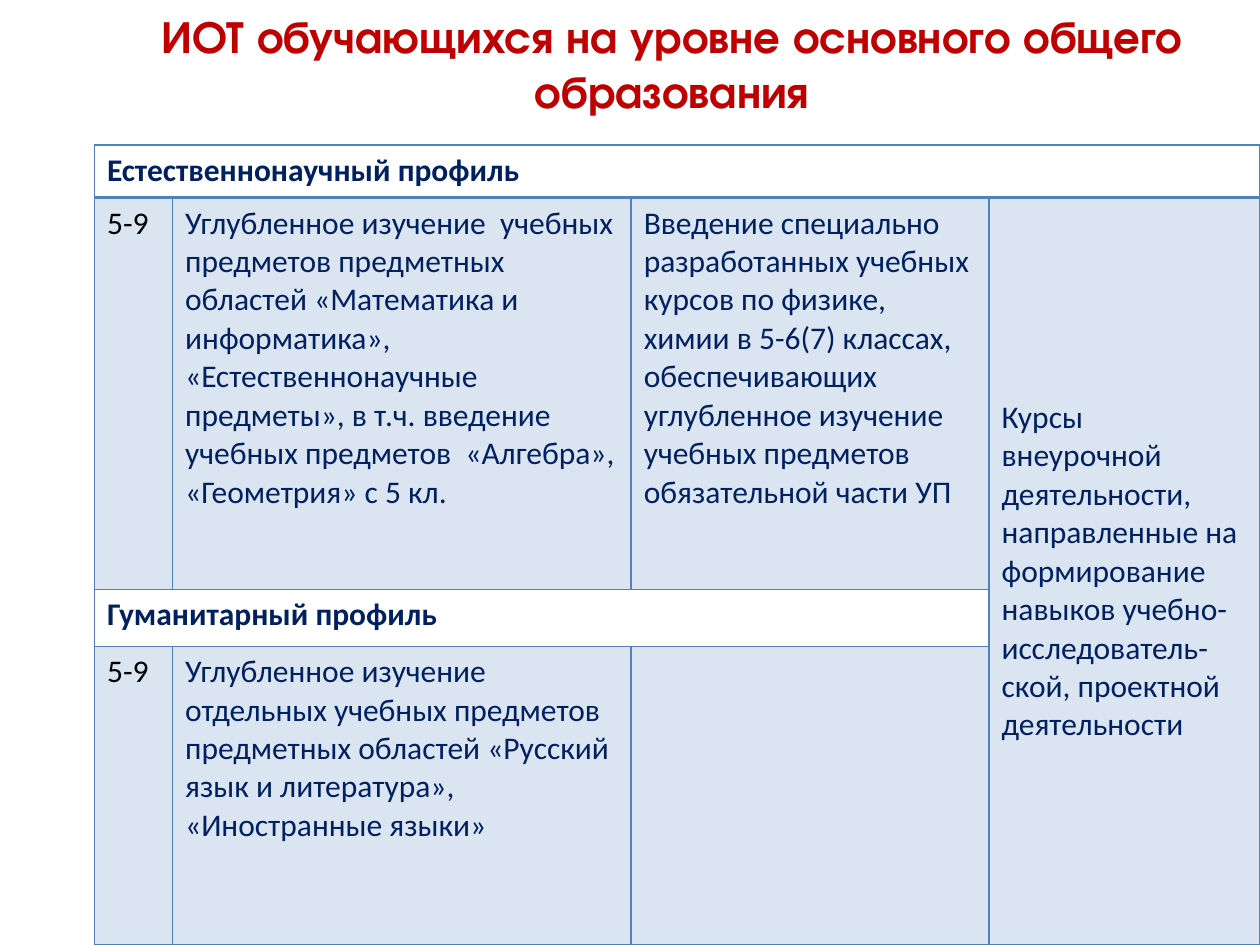
from lxml import etree
from pptx import Presentation
from pptx.dml.color import RGBColor
from pptx.enum.text import MSO_ANCHOR, PP_ALIGN
from pptx.oxml.ns import qn
from pptx.util import Inches, Pt

CENTER = PP_ALIGN.CENTER
MIDDLE = MSO_ANCHOR.MIDDLE

BLUE, NAVY, RED, BLACK = "4F81BD", "002060", "C00000", "000000"
COL_WIDTHS = [0.62, 3.64, 2.84, 2.15]
ROW_HEIGHTS = [0.42, 3.11, 0.45, 2.37]

TITLE = "ИОТ обучающихся на уровне основного общего образования"
ROWS = [
    ["Естественнонаучный профиль", "", "", ""],
    ["5-9",
     "Углубленное изучение  учебных предметов предметных областей "
     "«Математика и информатика», «Естественнонаучные предметы», в т.ч. "
     "введение учебных предметов  «Алгебра», «Геометрия» с 5 кл.",
     "Введение специально разработанных учебных курсов по физике, химии "
     "в 5-6(7) классах, обеспечивающих углубленное изучение учебных "
     "предметов обязательной части УП",
     "Курсы внеурочной деятельности, направленные на формирование навыков "
     "учебно-исследователь-ской, проектной деятельности"],
    ["Гуманитарный профиль", "", "", ""],
    ["5-9",
     "Углубленное изучение отдельных учебных предметов предметных областей "
     "«Русский язык и литература», «Иностранные языки»",
     "", ""],
]
PROFILE_ROWS = (0, 2)
# First and last cell (row, column) of each merged block
MERGES = [((0, 0), (0, 3)), ((1, 3), (3, 3)), ((2, 0), (2, 2))]


def rgb(color):
    return RGBColor.from_string(color)


def set_text(tf, text, font, size, color, bold=False):
    p = tf.paragraphs[0]
    p.text = text
    for r in p.runs:
        r.font.name = font
        r.font.size = Pt(size)
        r.font.bold = bold
        r.font.color.rgb = rgb(color)
    return p


def add_title(slide):
    sp = slide.shapes.add_textbox(Inches(0.67), Inches(0.01),
                                  Inches(9.33), Inches(0.98))
    tf = sp.text_frame
    tf.word_wrap = True
    tf.vertical_anchor = MIDDLE
    p = set_text(tf, TITLE, "TeX Gyre Adventor", 26, RED, bold=True)
    p.alignment = CENTER


def set_borders(cell, widths):
    tc_pr = cell._tc.get_or_add_tcPr()
    for side, width in zip("LRTB", widths):
        ln = etree.SubElement(tc_pr, qn(f"a:ln{side}"), w=str(Pt(width)))
        fill = etree.SubElement(ln, qn("a:solidFill"))
        etree.SubElement(fill, qn("a:srgbClr"), val=BLUE)


def set_tint(cell, color, percent):
    cell.fill.solid()
    cell.fill.fore_color.rgb = rgb(color)
    clr = cell._tc.tcPr.find(qn("a:solidFill")).find(qn("a:srgbClr"))
    etree.SubElement(clr, qn("a:alpha"), val=str(percent * 1000))


def add_profile_table(slide):
    table = slide.shapes.add_table(
        len(ROW_HEIGHTS), len(COL_WIDTHS), Inches(0.75), Inches(1.15),
        Inches(sum(COL_WIDTHS)), Inches(sum(ROW_HEIGHTS))).table
    for column, width in zip(table.columns, COL_WIDTHS):
        column.width = Inches(width)
    for row, height in zip(table.rows, ROW_HEIGHTS):
        row.height = Inches(height)
    for first, last in MERGES:
        table.cell(*first).merge(table.cell(*last))

    for i, texts in enumerate(ROWS):
        for j, text in enumerate(texts):
            cell = table.cell(i, j)
            # The rule under the first heading is thicker
            set_borders(cell, (1, 1, 2 if i == 1 else 1, 2 if i == 0 else 1))
            heading = i in PROFILE_ROWS
            if i == 0 or (heading and j < 3):
                cell.fill.background()
            else:
                set_tint(cell, BLUE, 20)
            if text:
                color = BLACK if j == 0 and not heading else NAVY
                set_text(cell.text_frame, text, "Calibri", 18, color, heading)
    table.cell(1, 3).vertical_anchor = MIDDLE


def main():
    prs = Presentation()
    prs.slide_width, prs.slide_height = Inches(10), Inches(7.5)
    slide = prs.slides.add_slide(prs.slide_layouts[6])
    add_title(slide)
    add_profile_table(slide)
    prs.save("out.pptx")


if __name__ == "__main__":
    main()
